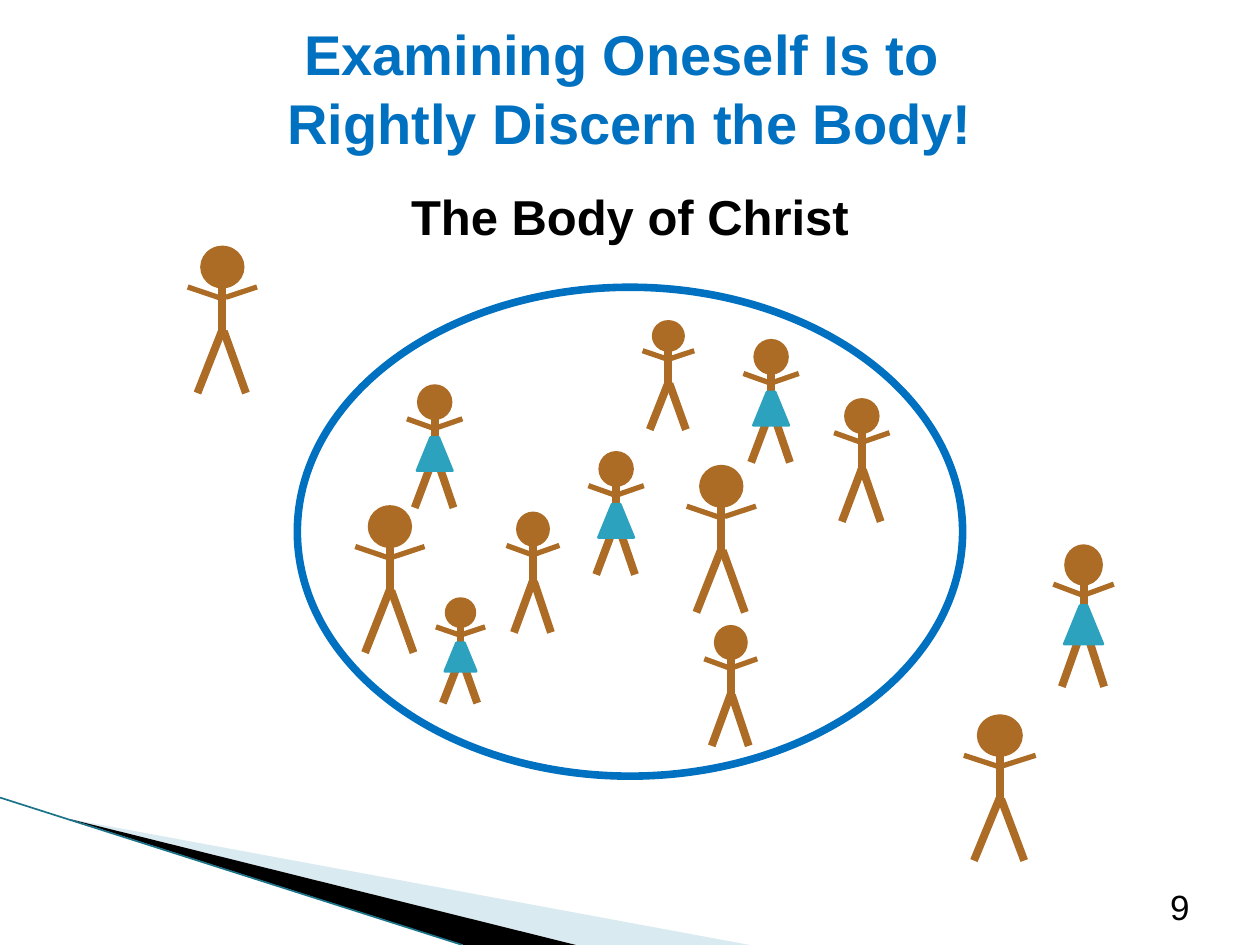
from copy import deepcopy

from lxml.etree import SubElement
from pptx import Presentation
from pptx.dml.color import RGBColor
from pptx.enum.shapes import MSO_CONNECTOR as Connector, MSO_SHAPE as Shape
from pptx.enum.text import MSO_ANCHOR as Anchor, MSO_AUTO_SIZE as AutoSize, PP_ALIGN as Align
from pptx.oxml.ns import qn
from pptx.util import Inches, Pt

BLUE, BROWN, TEAL, BLACK = "0070C0", "AD6C25", "2DA2BF", "000000"

MEN = [
    (5.10, 2.54, 0.41, 0.87), (5.45, 3.69, 0.55, 1.17), (6.62, 3.16, 0.44, 0.98),
    (2.82, 4.01, 0.55, 1.17), (5.59, 4.96, 0.42, 0.96), (4.02, 4.06, 0.42, 0.96),
    (7.65, 5.67, 0.57, 1.16), (1.49, 1.95, 0.55, 1.17),
]
WOMEN = [
    (3.23, 3.05, 0.44, 0.98), (5.90, 2.69, 0.44, 0.98), (4.67, 3.58, 0.44, 0.98),
    (3.46, 4.74, 0.39, 0.84), (8.36, 4.32, 0.48, 1.13),
]
LIMBS = [
    (0.50, 0.10, 0.50, 0.58, 4.5),
    (0.50, 0.57, 0.14, 1.00, 4.5),
    (0.52, 0.58, 0.84, 1.00, 4.5),
    (0.55, 0.35, 1.00, 0.28, 3),
    (0.50, 0.36, 0.00, 0.28, 3),
]


def rgb(color):
    """Turn a hex string into a colour."""
    return RGBColor.from_string(color)


def write(holder, text, size, color=BLACK, bold=False, align=Align.CENTER,
          anchor=Anchor.TOP, spacing=1.0):
    """Put one formatted paragraph into a shape."""
    frame = holder.text_frame
    frame.word_wrap = True
    frame.auto_size = AutoSize.NONE
    frame.vertical_anchor = anchor
    paragraph = frame.paragraphs[0]
    paragraph.text = text
    paragraph.alignment = align
    paragraph.line_spacing = spacing
    for run in paragraph.runs:
        run.font.name = "Arial"
        run.font.size = Pt(size)
        run.font.bold = bold
        run.font.color.rgb = rgb(color)
    for line_break in paragraph._p.findall(qn("a:br")):
        line_break.insert(0, deepcopy(paragraph.runs[0]._r.rPr))


def paint(shape, fill=None, line=None, weight=1.0):
    """Set the fill and outline of a shape and drop its shadow."""
    shape.shadow.inherit = False
    if fill:
        shape.fill.solid()
        shape.fill.fore_color.rgb = rgb(fill)
    else:
        shape.fill.background()
    if line:
        shape.line.color.rgb = rgb(line)
        shape.line.width = Pt(weight)
    else:
        shape.line.fill.background()


def add_preset(shapes, kind, left, top, width, height, **look):
    """Add a painted preset shape."""
    shape = shapes.add_shape(kind, Inches(left), Inches(top), Inches(width), Inches(height))
    paint(shape, **look)
    return shape


def add_line(shapes, x1, y1, x2, y2, color, weight):
    """Add a straight line without a shadow."""
    line = shapes.add_connector(Connector.STRAIGHT, Inches(x1), Inches(y1), Inches(x2), Inches(y2))
    line.line.color.rgb = rgb(color)
    line.line.width = Pt(weight)
    SubElement(line._element.spPr, qn("a:effectLst"))


def add_wedge(shapes, points, color):
    """Add a filled polygon through the given points."""
    corners = [(Inches(x), Inches(y)) for x, y in points]
    builder = shapes.build_freeform(*corners[0])
    builder.add_line_segments(corners[1:], close=True)
    wedge = builder.convert_to_shape()
    paint(wedge, fill=color)
    return wedge


def add_corner(shapes, left, top, bottom):
    """Draw the wedges that sweep along the lower left corner."""
    pale = add_wedge(shapes, [(left, top), (left + 5.4, bottom), (left + 4.01, bottom)], "A0CBDC")
    tint = pale._element.spPr.find(qn("a:solidFill"))[0]
    SubElement(tint, qn("a:alpha"), val="40000")
    add_wedge(shapes, [(left, top), (left + 4.02, bottom), (left + 3.13, bottom)], BLACK)
    add_line(shapes, 0, top - 0.17, left + 3.12, bottom, "1C7288", 0.95)


def add_person(shapes, left, top, width, height, skirt=False):
    """Draw a grouped stick figure that fills the given box."""
    person = shapes.add_group_shape().shapes
    head_left, head_width = left + 0.18 * width, 0.64 * width
    add_preset(person, Shape.OVAL, head_left, top, head_width, 0.29 * height, fill=BROWN)
    for x1, y1, x2, y2, weight in LIMBS:
        add_line(person, left + x1 * width, top + y1 * height,
                 left + x2 * width, top + y2 * height, BROWN, weight)
    if skirt:
        dress = add_preset(person, Shape.TRAPEZOID, head_left, top + 0.43 * height,
                           head_width, 0.27 * height, fill=TEAL, line=TEAL, weight=1.5)
        dress.adjustments[0] = 0.41


def add_text(shapes, left, top, width, height, text, **look):
    """Add a text box."""
    box = shapes.add_textbox(Inches(left), Inches(top), Inches(width), Inches(height))
    write(box, text, **look)


def add_title(title, left, top, width, height, text):
    """Place and format the title placeholder."""
    title.left, title.top = Inches(left), Inches(top)
    title.width, title.height = Inches(width), Inches(height)
    write(title, text, size=32, color=BLUE, bold=True, anchor=Anchor.MIDDLE, spacing=1.04)


def add_body(shapes, left, top, width, height):
    """Draw the labelled oval with the people in and around it."""
    add_preset(shapes, Shape.OVAL, left, top, width, height, line=BLUE, weight=4.33)
    add_text(shapes, left + 0.74, top - 0.85, width - 1.48, 0.57,
             "The Body of Christ", size=28, bold=True)
    for x, y, *size in WOMEN:
        add_person(shapes, left + x - 2.36, top + y - 2.28, *size, skirt=True)
    for x, y, *size in MEN:
        add_person(shapes, left + x - 2.36, top + y - 2.28, *size)


def main():
    """Build the slide and save it."""
    deck = Presentation()
    deck.slide_width, deck.slide_height = Inches(10), Inches(7.5)
    slide = deck.slides.add_slide(deck.slide_layouts[5])
    shapes = slide.shapes
    add_corner(shapes, 0.55, 6.5, 7.5)
    add_title(shapes.title, 0.5, 0.21, 9, 0.95,
              "Examining Oneself Is to \vRightly Discern the Body!")
    add_body(shapes, 2.36, 2.28, 5.28, 3.88)
    add_text(shapes, 8.77, 7.01, 0.77, 0.4, "9", size=20,
             align=Align.RIGHT, anchor=Anchor.BOTTOM)
    deck.save("out.pptx")


if __name__ == "__main__":
    main()
